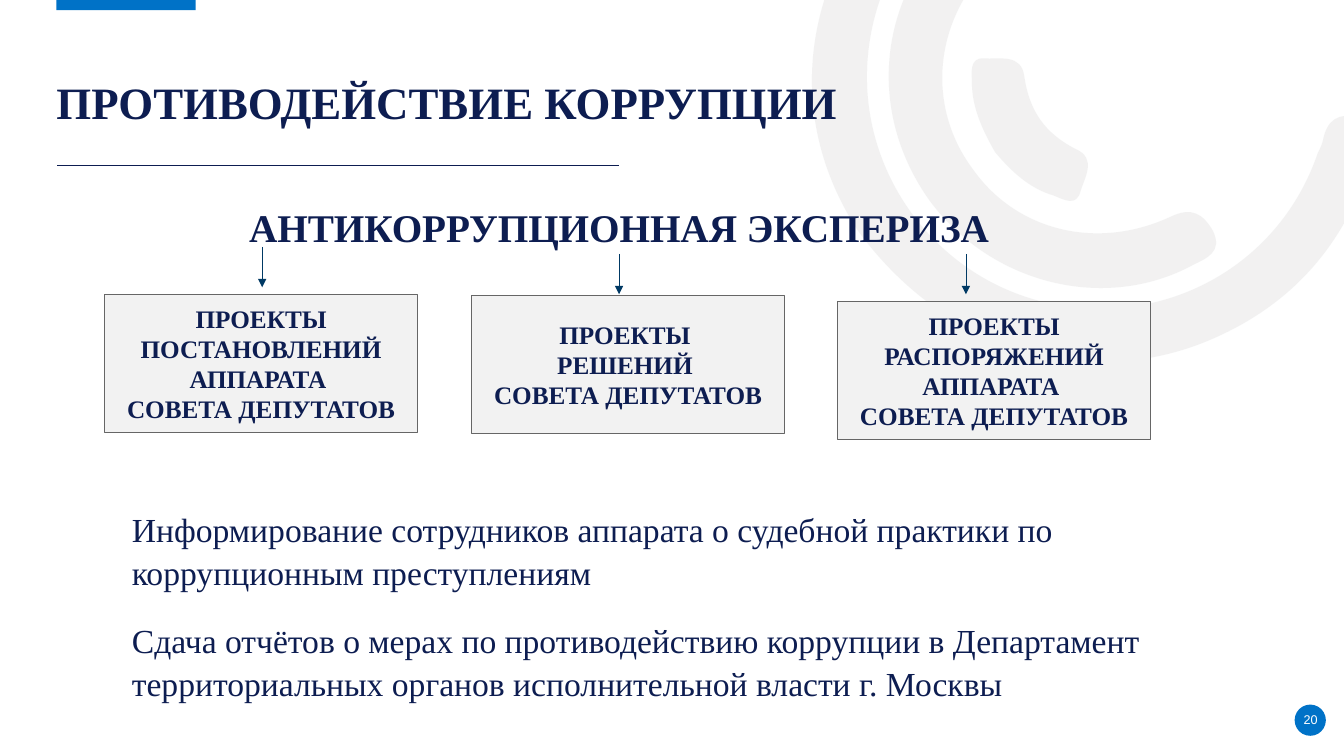
from pptx import Presentation
from pptx.dml.color import RGBColor
from pptx.enum.shapes import MSO_CONNECTOR, MSO_SHAPE
from pptx.enum.text import MSO_ANCHOR, MSO_AUTO_SIZE, PP_ALIGN
from pptx.oxml.ns import qn
from pptx.util import Inches, Pt
from lxml.etree import SubElement

NAVY = RGBColor(0x0D, 0x1D, 0x51)
BLUE = RGBColor(0x00, 0x72, 0xC7)
ARROW_BLUE = RGBColor(0x00, 0x39, 0x64)
BOX_FILL = RGBColor(0xF2, 0xF2, 0xF2)
BOX_LINE = RGBColor(0x66, 0x66, 0x66)
ARC_GREY = RGBColor(0xE7, 0xE6, 0xE6)
WHITE = RGBColor(0xFF, 0xFF, 0xFF)
SERIF = "Times New Roman"

# Each outline: a start point, then cubic curves (two control points and an end).
OUTER_ARC = (8.51, 2.29), [
    (7.99, 1.49, 7.87, 0.5, 8.38, -0.5),
    (8.9, -1.52, 9.76, -2.03, 10.9, -2.07),
    (11.05, -2.07, 11.21, -2.1, 11.31, -1.95),
    (11.44, -1.75, 11.27, -1.54, 10.98, -1.54),
    (9.67, -1.54, 8.65, -0.59, 8.6, 0.68),
    (8.56, 1.81, 9.36, 2.81, 10.46, 3.02),
    (11.6, 3.24, 12.7, 2.61, 13.07, 1.52),
    (13.09, 1.48, 13.11, 1.44, 13.12, 1.4),
    (13.16, 1.19, 13.27, 1.11, 13.49, 1.17),
    (13.73, 1.24, 13.67, 1.41, 13.61, 1.56),
    (13.34, 2.45, 12.78, 3.07, 11.91, 3.41),
    (10.7, 3.87, 9.36, 3.45, 8.51, 2.29),
]
MIDDLE_ARC = (9.22, 1.99), [
    (8.62, 1.15, 8.69, 0.07, 9.4, -0.68),
    (9.51, -0.79, 9.62, -0.95, 9.8, -0.78),
    (9.95, -0.64, 9.97, -0.5, 9.79, -0.32),
    (9.25, 0.26, 9.2, 1.08, 9.65, 1.68),
    (10.08, 2.29, 10.88, 2.49, 11.61, 2.15),
    (11.82, 2.05, 11.93, 2.12, 12.03, 2.29),
    (12.13, 2.5, 11.97, 2.56, 11.83, 2.63),
    (10.96, 3.1, 9.83, 2.82, 9.22, 1.99),
]
INNER_ARC = (9.87, 1.51), [
    (9.75, 1.3, 9.64, 1.07, 9.64, 0.82),
    (9.64, 0.73, 9.61, 0.57, 9.76, 0.58),
    (9.92, 0.59, 10.13, 0.53, 10.16, 0.76),
    (10.21, 1.1, 10.36, 1.32, 10.67, 1.48),
    (10.88, 1.57, 10.76, 1.76, 10.72, 1.89),
    (10.68, 2.06, 10.55, 1.98, 10.45, 1.94),
    (10.21, 1.87, 10.03, 1.7, 9.87, 1.51),
]

# Left, top, paragraphs
PROJECT_BOXES = [
    (1.04, 2.92, ["ПРОЕКТЫ ПОСТАНОВЛЕНИЙ АППАРАТА ", "СОВЕТА ДЕПУТАТОВ"]),
    (4.68, 2.93, ["ПРОЕКТЫ ", "РЕШЕНИЙ ", "СОВЕТА ДЕПУТАТОВ"]),
    (8.31, 2.99, ["ПРОЕКТЫ РАСПОРЯЖЕНИЙ АППАРАТА ", "СОВЕТА ДЕПУТАТОВ"]),
]
ARROWS = [(2.6, 2.45), (6.14, 2.52), (9.58, 2.52)]
ARROW_LENGTH = 0.4
MEASURES = [
    "Информирование сотрудников аппарата о судебной практики по "
    "коррупционным преступлениям",
    "Сдача отчётов о мерах по противодействию коррупции в Департамент "
    "территориальных органов исполнительной власти г. Москвы",
]


def fill_plain(shape, color):
    shape.shadow.inherit = False
    shape.fill.solid()
    shape.fill.fore_color.rgb = color
    shape.line.fill.background()


def bend_segments(shape):
    """Turn every three line segments into one cubic curve."""
    segments = list(shape._element.iter(qn("a:lnTo")))
    for curve, second, third in zip(*[iter(segments)] * 3):
        for segment in (second, third):
            curve.append(segment[0])
            segment.getparent().remove(segment)
        curve.tag = qn("a:cubicBezTo")


def add_arc(slide, start, curves):
    points = [(Inches(curve[i]), Inches(curve[i + 1]))
              for curve in curves for i in (0, 2, 4)]
    builder = slide.shapes.build_freeform(Inches(start[0]), Inches(start[1]))
    builder.add_line_segments(points, close=True)
    shape = builder.convert_to_shape()
    bend_segments(shape)
    fill_plain(shape, ARC_GREY)
    color = shape._element.spPr.find(qn("a:solidFill"))[0]
    SubElement(color, qn("a:alpha"), val="53000")


def add_plain_shape(slide, kind, left, top, width, height, color):
    shape = slide.shapes.add_shape(
        kind, Inches(left), Inches(top), Inches(width), Inches(height))
    fill_plain(shape, color)
    return shape


def write(frame, texts, size, color=NAVY, font=SERIF, bold=False,
          align=PP_ALIGN.LEFT, line=1.0, before=0, after=0):
    frame.word_wrap = True
    frame.auto_size = MSO_AUTO_SIZE.NONE
    for index, text in enumerate(texts):
        paragraph = frame.add_paragraph() if index else frame.paragraphs[0]
        paragraph.text = text
        paragraph.alignment = align
        paragraph.line_spacing = line
        paragraph.space_before = Pt(before)
        paragraph.space_after = Pt(after)
        paragraph.font.name = font
        paragraph.font.size = Pt(size)
        paragraph.font.bold = bold
        paragraph.font.color.rgb = color


def clear_margins(frame):
    frame.margin_left = frame.margin_right = 0
    frame.margin_top = frame.margin_bottom = 0


def add_text(slide, left, top, width, height, texts, size, **style):
    box = slide.shapes.add_textbox(
        Inches(left), Inches(top), Inches(width), Inches(height))
    write(box.text_frame, texts, size, **style)
    return box


def add_line(slide, x1, y1, x2, y2, color, arrow=False):
    connector = slide.shapes.add_connector(
        MSO_CONNECTOR.STRAIGHT, Inches(x1), Inches(y1), Inches(x2), Inches(y2))
    connector.line.color.rgb = color
    connector.line.width = Pt(0.5)
    properties = connector._element.spPr
    if arrow:
        SubElement(properties.find(qn("a:ln")), qn("a:tailEnd"), type="triangle")
    SubElement(properties, qn("a:effectLst"))


def add_project_box(slide, left, top, texts):
    box = add_plain_shape(
        slide, MSO_SHAPE.RECTANGLE, left, top, 3.1, 1.37, BOX_FILL)
    box.line.color.rgb = BOX_LINE
    box.line.width = Pt(0.5)
    box.text_frame.vertical_anchor = MSO_ANCHOR.MIDDLE
    write(box.text_frame, texts, 18, bold=True, align=PP_ALIGN.CENTER)


def set_title(slide, text):
    """Fill the title placeholder and bring it in front of the backdrop."""
    title = slide.shapes.title
    title.left, title.top = Inches(0.56), Inches(0.27)
    title.width, title.height = Inches(12.19), Inches(1.01)
    title.text_frame.vertical_anchor = MSO_ANCHOR.BOTTOM
    clear_margins(title.text_frame)
    write(title.text_frame, [text], 32, bold=True, line=0.9)
    title._element.getparent().append(title._element)


def add_page_number(slide, number):
    label = add_text(slide, 12.84, 7.04, 0.32, 0.2, [number], 9, color=WHITE,
                     font="Arial", align=PP_ALIGN.CENTER)
    clear_margins(label.text_frame)
    label.text_frame.vertical_anchor = MSO_ANCHOR.MIDDLE


def main():
    presentation = Presentation()
    presentation.slide_width = Inches(13.33)
    presentation.slide_height = Inches(7.5)
    slide = presentation.slides.add_slide(presentation.slide_layouts[5])

    for start, curves in (OUTER_ARC, MIDDLE_ARC, INNER_ARC):
        add_arc(slide, start, curves)
    add_plain_shape(slide, MSO_SHAPE.RECTANGLE, 0.56, -0.02, 1.38, 0.12, BLUE)
    add_plain_shape(slide, MSO_SHAPE.OVAL, 12.84, 6.99, 0.31, 0.31, BLUE)

    set_title(slide, "ПРОТИВОДЕЙСТВИЕ КОРРУПЦИИ")
    add_page_number(slide, "20")
    add_text(slide, 1.21, 4.97, 10.26, 2.15, MEASURES, 24,
             line=1.07, before=10, after=8)
    add_text(slide, 1.72, 2.02, 8.84, 0.45, ["АНТИКОРРУПЦИОННАЯ ЭКСПЕРИЗА"], 28,
             bold=True, align=PP_ALIGN.CENTER, line=0.9, before=10)
    add_line(slide, 0.57, 1.64, 6.14, 1.64, NAVY)
    for x, y in ARROWS:
        add_line(slide, x, y, x, y + ARROW_LENGTH, ARROW_BLUE, arrow=True)
    for left, top, texts in PROJECT_BOXES:
        add_project_box(slide, left, top, texts)

    presentation.save("out.pptx")


if __name__ == "__main__":
    main()
